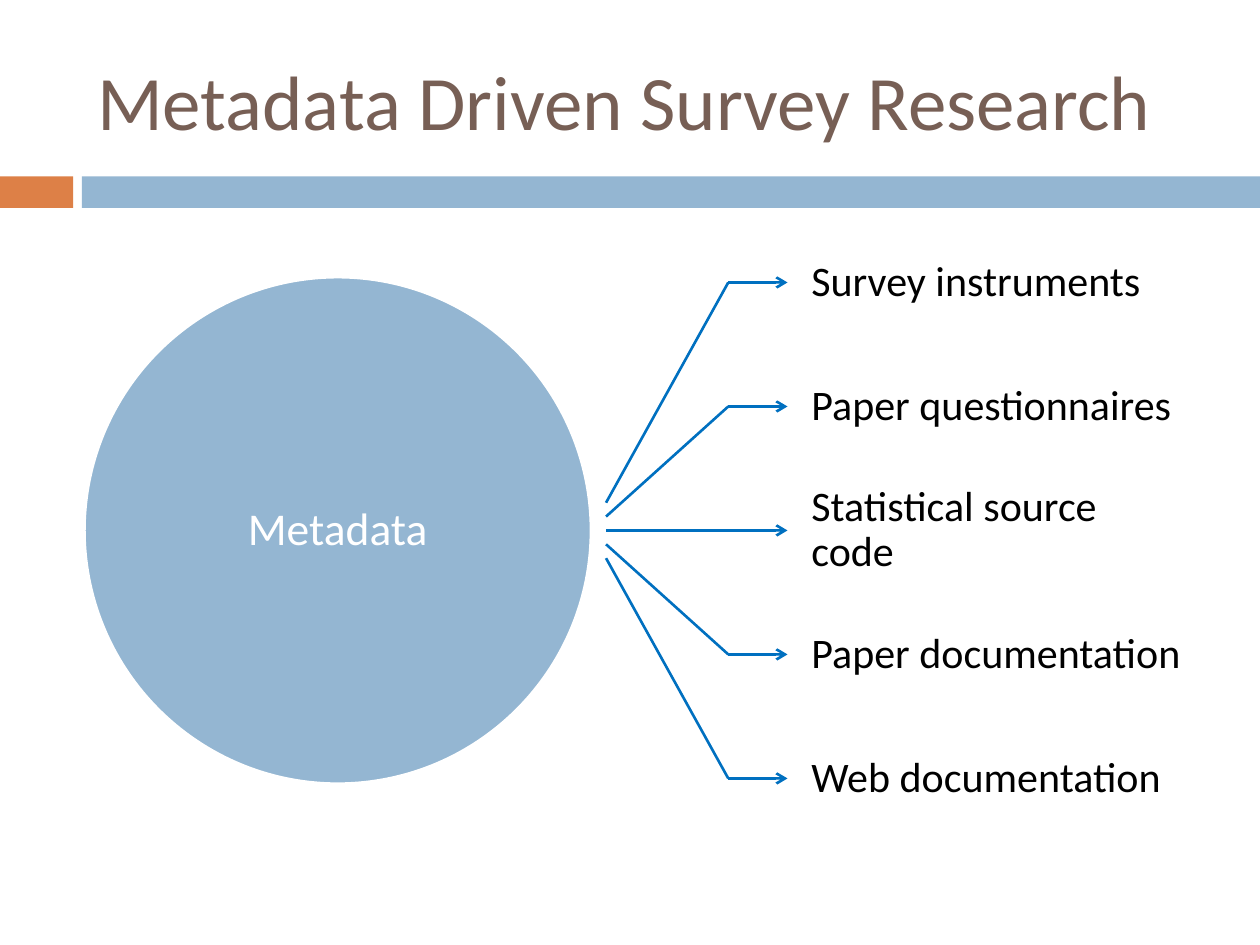
from dataclasses import dataclass

from pptx import Presentation
from pptx.dml.color import RGBColor
from pptx.enum.shapes import MSO_CONNECTOR, MSO_SHAPE
from pptx.enum.text import MSO_ANCHOR, MSO_AUTO_SIZE, PP_ALIGN
from pptx.oxml.ns import qn
from pptx.util import Inches, Pt
from lxml.etree import SubElement


@dataclass(frozen=True)
class Theme:
    font: str = "Calibri"
    brown: str = "775F55"
    orange: str = "DD8047"
    blue: str = "94B6D2"
    arrow: str = "0070C0"
    white: str = "FFFFFF"
    black: str = "000000"
    title_size: int = 44
    hub_size: int = 26
    label_size: int = 24
    line_width: float = 1.5


def write_text(frame, text, *, font, size, color, align=PP_ALIGN.LEFT,
               spacing=None, inset=None):
    """Fill a text frame with one vertically centred paragraph."""
    frame.word_wrap = True
    frame.auto_size = MSO_AUTO_SIZE.NONE
    frame.vertical_anchor = MSO_ANCHOR.MIDDLE
    if inset is not None:
        frame.margin_left = frame.margin_right = Inches(inset)
        frame.margin_top = frame.margin_bottom = Inches(inset)
    paragraph = frame.paragraphs[0]
    paragraph.alignment = align
    paragraph.line_spacing = spacing
    run = paragraph.add_run()
    run.text = text
    run.font.name = font
    run.font.size = Pt(size)
    run.font.color.rgb = RGBColor.from_string(color)


class SlideBuilder:
    def __init__(self, slide, theme):
        self.slide = slide
        self.theme = theme

    def title(self, text, left, top, width, height):
        heading = self.slide.shapes.title
        heading.left, heading.top = Inches(left), Inches(top)
        heading.width, heading.height = Inches(width), Inches(height)
        write_text(heading.text_frame, text, font=self.theme.font,
                   size=self.theme.title_size, color=self.theme.brown)

    def shape(self, preset, left, top, width, height, fill, outline=None):
        figure = self.slide.shapes.add_shape(
            preset, Inches(left), Inches(top), Inches(width), Inches(height))
        figure.shadow.inherit = False
        figure.fill.solid()
        figure.fill.fore_color.rgb = RGBColor.from_string(fill)
        if outline:
            figure.line.color.rgb = RGBColor.from_string(outline)
            figure.line.width = Pt(self.theme.line_width)
        else:
            figure.line.fill.background()
        return figure

    def label(self, text, left, top, width, height):
        box = self.slide.shapes.add_textbox(
            Inches(left), Inches(top), Inches(width), Inches(height))
        write_text(box.text_frame, text, font=self.theme.font,
                   size=self.theme.label_size, color=self.theme.black,
                   spacing=0.9, inset=0.19)
        return box

    def line(self, x1, y1, x2, y2, target=None):
        """Draw a line; with a target, end it in an arrow at its left side."""
        connector = self.slide.shapes.add_connector(
            MSO_CONNECTOR.STRAIGHT,
            Inches(x1), Inches(y1), Inches(x2), Inches(y2))
        connector.line.color.rgb = RGBColor.from_string(self.theme.arrow)
        connector.line.width = Pt(self.theme.line_width)
        properties = connector._element.spPr
        SubElement(properties, qn("a:effectLst"))
        if target is not None:
            SubElement(properties.find(qn("a:ln")), qn("a:tailEnd"), type="arrow")
            connector.end_connect(target, 1)


def main():
    theme = Theme()
    deck = Presentation()
    deck.slide_width, deck.slide_height = Inches(10), Inches(7.5)
    builder = SlideBuilder(deck.slides.add_slide(deck.slide_layouts[5]), theme)

    # Title and the two-colour band below it
    builder.shape(MSO_SHAPE.RECTANGLE, 0, 1.4, 0.58, 0.25, theme.orange)
    builder.shape(MSO_SHAPE.RECTANGLE, 0.65, 1.4, 9.35, 0.25, theme.blue)
    builder.title("Metadata Driven Survey Research", 0.67, 0.25, 8.92, 1.08)

    # Metadata circle
    center_y, diameter = 4.21, 4.02
    metadata = builder.shape(MSO_SHAPE.OVAL, 0.67, center_y - diameter / 2,
                             diameter, diameter, theme.blue, theme.white)
    write_text(metadata.text_frame, "Metadata", font=theme.font,
               size=theme.hub_size, color=theme.white,
               align=PP_ALIGN.CENTER, spacing=0.9, inset=0)

    # Outputs fan out evenly around the circle's centre line
    outputs = ["Survey instruments", "Paper questionnaires",
               "Statistical source code", "Paper documentation",
               "Web documentation"]
    row_height = 4.92 / len(outputs)
    fan_gap = 0.11
    fan_x, bend_x, label_x = 4.81, 5.78, 6.25
    for index, output in enumerate(outputs):
        offset = index - (len(outputs) - 1) / 2
        row_y = center_y + offset * row_height
        builder.line(fan_x, center_y + offset * fan_gap, bend_x, row_y)
        label = builder.label(output, label_x, row_y - row_height / 2,
                              3.33, row_height)
        builder.line(bend_x, row_y, label_x, row_y, target=label)

    deck.save("out.pptx")


if __name__ == "__main__":
    main()
